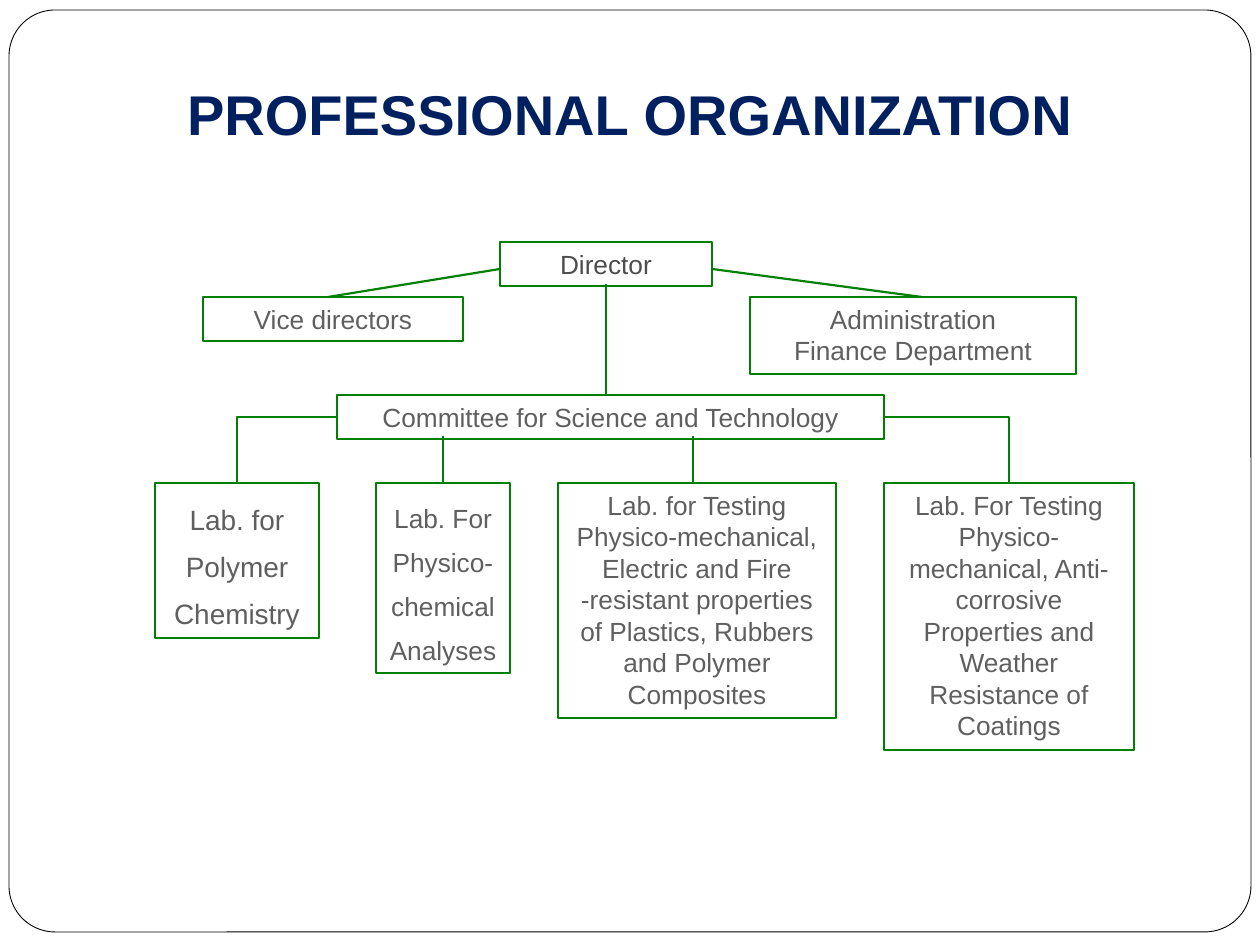
from dataclasses import dataclass

from lxml.etree import SubElement
from pptx import Presentation
from pptx.dml.color import RGBColor
from pptx.enum.shapes import MSO_CONNECTOR, MSO_SHAPE
from pptx.enum.text import MSO_ANCHOR, MSO_AUTO_SIZE, PP_ALIGN
from pptx.oxml.ns import qn
from pptx.util import Emu, Pt

PX_PER_INCH = 126


def px(n):
    return Emu(round(n * 914400 / PX_PER_INCH))


@dataclass(frozen=True)
class Theme:
    font: str = "Arial"
    title: str = "002060"
    head: str = "4D4D4D"
    text: str = "5F5F5F"
    line: str = "008000"
    frame: str = "000000"
    paper: str = "FFFFFF"
    title_size: int = 32
    large_size: int = 16
    box_size: int = 15
    line_width: float = 1.25
    frame_width: float = 0.5


class OrgChart:
    """Holds the theme and the slide that the chart is drawn on."""

    def __init__(self, slide, theme):
        self.slide, self.theme = slide, theme

    def stroke(self, line, color, width):
        line.color.rgb = RGBColor.from_string(color)
        line.width = Pt(width)

    def set_text(self, tf, lines, size, color, bold=False, spacing=None, **frame):
        for name, value in {"word_wrap": True, "vertical_anchor": MSO_ANCHOR.TOP,
                            **frame}.items():
            setattr(tf, name, value)
        for i, text in enumerate(lines):
            p = tf.add_paragraph() if i else tf.paragraphs[0]
            p.alignment, p.line_spacing = PP_ALIGN.CENTER, spacing
            r = p.add_run()
            r.text = text
            font = {"name": self.theme.font, "size": Pt(size), "bold": bold}
            for name, value in font.items():
                setattr(r.font, name, value)
            r.font.color.rgb = RGBColor.from_string(color)

    def shape(self, kind, at):
        sp = self.slide.shapes.add_shape(kind, *map(px, at))
        sp.shadow.inherit = False
        return sp

    def frame(self, at):
        """Draw the rounded page border behind everything else."""
        sp = self.shape(MSO_SHAPE.ROUNDED_RECTANGLE, at)
        sp.adjustments[0] = 0.05
        sp.fill.solid()
        sp.fill.fore_color.rgb = RGBColor.from_string(self.theme.paper)
        self.stroke(sp.line, self.theme.frame, self.theme.frame_width)
        self.slide.shapes._spTree.insert(2, sp._element)

    def title(self, text, at):
        sp = self.slide.shapes.title
        sp.left, sp.top, sp.width, sp.height = map(px, at)
        self.set_text(sp.text_frame, [text], self.theme.title_size, self.theme.title,
                      bold=True, auto_size=MSO_AUTO_SIZE.NONE)

    def box(self, at, *lines, size=None, color=None, spacing=None):
        sp = self.shape(MSO_SHAPE.RECTANGLE, at)
        sp.fill.background()
        self.stroke(sp.line, self.theme.line, self.theme.line_width)
        self.set_text(sp.text_frame, lines, size or self.theme.box_size,
                      color or self.theme.text, spacing=spacing,
                      auto_size=MSO_AUTO_SIZE.SHAPE_TO_FIT_TEXT)

    def link(self, start, end, bent=False):
        kind = MSO_CONNECTOR.ELBOW if bent else MSO_CONNECTOR.STRAIGHT
        cxn = self.slide.shapes.add_connector(kind, *map(px, (*start, *end)))
        self.stroke(cxn.line, self.theme.line, self.theme.line_width)
        props = cxn._element.spPr
        SubElement(props, qn("a:effectLst"))
        if bent:  # a single corner
            props.find(qn("a:prstGeom")).set("prst", "bentConnector2")


def main():
    prs = Presentation()
    prs.slide_width, prs.slide_height = px(1260), px(945)
    theme = Theme()
    chart = OrgChart(prs.slides.add_slide(prs.slide_layouts[5]), theme)
    chart.frame((9, 10, 1242, 922))
    chart.title("PROFESSIONAL ORGANIZATION", (126, 73, 1008, 81))

    row_height = 44
    staff_top, committee_top, lab_top = 297, 395, 483
    chart.box((500, 242, 212, row_height), "Director", color=theme.head)
    chart.box((203, staff_top, 260, row_height), "Vice directors")
    chart.box((750, staff_top, 326, 77), "Administration", "Finance Department")
    chart.box((337, committee_top, 547, row_height),
              "Committee for Science and Technology")

    chart.box((155, lab_top, 164, 155), "Lab. for Polymer Chemistry",
              size=theme.large_size, spacing=1.4)
    chart.box((376, lab_top, 134, 190), "Lab. For Physico- chemical Analyses",
              spacing=1.4)
    chart.box((558, lab_top, 278, 235),
              "Lab. for Testing Physico-mechanical, Electric and Fire -resistant "
              "properties of Plastics, Rubbers and Polymer Composites")
    chart.box((884, lab_top, 250, 267),
              "Lab. For Testing Physico-mechanical, Anti-corrosive Properties "
              "and Weather Resistance of Coatings")

    for start, end_x in (((500, 269), 328), ((712, 269), 922)):
        chart.link(start, (end_x, staff_top))
    chart.link((606, 284), (606, committee_top))
    for x in (443, 693):
        chart.link((x, 436), (x, lab_top))
    for edge, x in ((337, 237), (884, 1009)):
        chart.link((edge, committee_top + row_height // 2), (x, lab_top), bent=True)

    prs.save("out.pptx")


if __name__ == "__main__":
    main()
